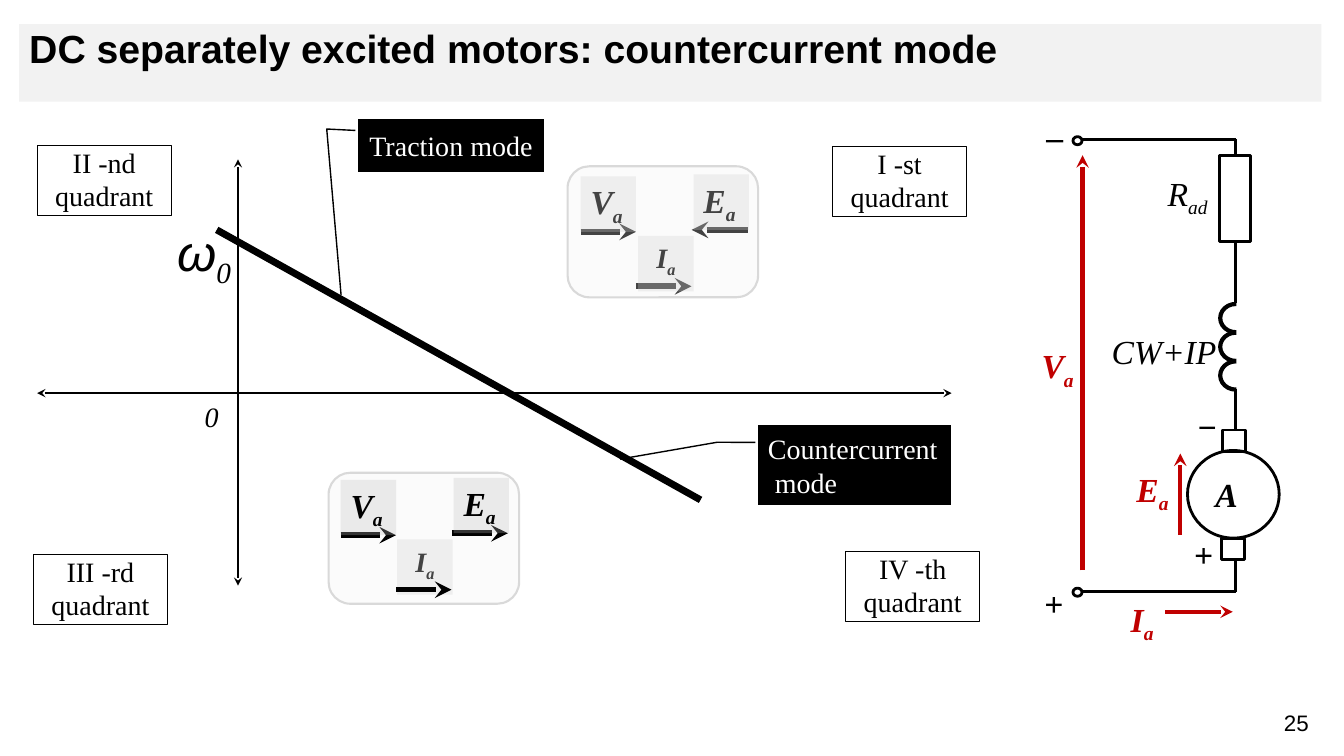
from dataclasses import dataclass

from lxml.etree import SubElement
from pptx import Presentation
from pptx.dml.color import RGBColor
from pptx.enum.shapes import MSO_CONNECTOR as Link, MSO_SHAPE as Kind
from pptx.enum.text import MSO_ANCHOR as Anchor, PP_ALIGN as Align
from pptx.oxml.ns import qn
from pptx.util import Pt


@dataclass(frozen=True)
class Theme:
    """Colours, fonts and type sizes of the slide."""
    black: str = "000000"
    white: str = "FFFFFF"
    red: str = "C00000"
    pale: str = "F2F2F2"
    tile: str = "BFBFBF"
    edge: str = "D9D9D9"
    sans: str = "Arial"
    serif: str = "Times New Roman"
    title: int = 28
    omega: int = 36
    label: int = 24
    text: int = 20
    page: int = 16


T = Theme()


def rgb(code):
    """Turn a hex code into a colour."""
    return RGBColor.from_string(code)


def write(shape, text, size, color=T.black, font=T.serif, bold=False,
          slant=False, align=Align.LEFT, space=None, sub=""):
    """Set and format the text of a shape, with an optional subscript."""
    frame = shape.text_frame
    frame.text = text
    frame.vertical_anchor = Anchor.TOP
    if sub:
        run = frame.paragraphs[0].add_run()
        run.text = sub
        run.font._element.set("baseline", "-25000")
    for para in frame.paragraphs:
        para.alignment = align
        para.line_spacing = space
        for run in para.runs:
            face = run.font
            face.name, face.size = font, Pt(size)
            face.bold, face.italic = bold, slant
            face.color.rgb = rgb(color)
    return frame


def shade(shape, alpha):
    """Make the fill of a shape see-through, alpha in percent."""
    tint = shape._element.spPr.find(qn("a:solidFill"))[0]
    SubElement(tint, qn("a:alpha")).set("val", str(alpha * 1000))


def block(slide, kind, box, fill=None, line=None, width=1):
    """Add a preset shape with plain fill and outline."""
    shape = slide.shapes.add_shape(kind, *map(Pt, box))
    shape.shadow.inherit = False
    if fill:
        shape.fill.solid()
        shape.fill.fore_color.rgb = rgb(fill)
    else:
        shape.fill.background()
    if line:
        shape.line.color.rgb = rgb(line)
        shape.line.width = Pt(width)
    else:
        shape.line.fill.background()
    return shape


def rule(slide, start, end, width, color=T.black, tips=()):
    """Add a straight line, with stealth tips at the named ends."""
    line = slide.shapes.add_connector(Link.STRAIGHT, *map(Pt, start + end))
    line.line.color.rgb = rgb(color)
    line.line.width = Pt(width)
    for tip in tips:
        SubElement(line.line._get_or_add_ln(), qn(tip)).set("type", "stealth")
    SubElement(line._element.spPr, qn("a:effectLst"))


def arrow(slide, start, end, width, color=T.black):
    """Add a line with one tip at its end."""
    rule(slide, start, end, width, color, ("a:tailEnd",))


def label(slide, box, text, size=T.label, **style):
    """Add a slanted text box that stays on one line."""
    shape = slide.shapes.add_textbox(*map(Pt, box))
    frame = write(shape, text, size, slant=True, **style)
    frame.word_wrap = False
    return frame


def callout(slide, box, bends, text, align):
    """Add a black callout with a bent leader line."""
    shape = block(slide, Kind.LINE_CALLOUT_2_NO_BORDER, box, T.black, T.black)
    for i, bend in enumerate(bends):
        shape.adjustments[i] = bend
    frame = write(shape, text, T.text, T.white, align=align)
    frame.vertical_anchor = Anchor.MIDDLE


def tile(slide, x, y, text, size=T.label, align=Align.LEFT):
    """Add a grey square that names one quantity."""
    shape = block(slide, Kind.RECTANGLE, (x, y, 39.6, 39.6), T.tile)
    shade(shape, 28)
    write(shape, text, size, bold=True, slant=True, align=align, sub="a")


def pane(slide, x, y):
    """Add the rounded see-through frame of a panel."""
    shape = block(slide, Kind.ROUNDED_RECTANGLE, (x, y, 136.1, 93.6),
                  T.pale, T.edge, 1.5)
    shade(shape, 28)


def marks(slide, x, y, back):
    """Add the three arrows and the voltage tiles of a panel."""
    ends = [(x + 88, y + 43.2), (x + 128, y + 43.2)]
    arrow(slide, *(ends[::-1] if back else ends), 4)
    for dx, dy in ((8.6, 44.6), (48.2, 83.5)):
        arrow(slide, (x + dx, y + dy), (x + dx + 39.6, y + dy), 4)
    tile(slide, x + 89.3, y + 3.6, "Е")
    tile(slide, x + 8.6, y + 5, "V")


def panels(slide):
    """Add the two panels of voltage, EMF and current directions."""
    x, y = 234.7, 337.7
    tile(slide, x + 49, y + 47.5, "I", T.text, Align.CENTER)
    pane(slide, x, y)
    marks(slide, x, y, False)
    x, y = 406.1, 121
    marks(slide, x, y, True)
    tile(slide, x + 49.7, y + 47.5, "I", T.text, Align.CENTER)
    pane(slide, x - 0.7, y - 2.2)


def graph(slide):
    """Add the axes, the speed line, quadrant names and callouts."""
    both = ("a:headEnd", "a:tailEnd")
    rule(slide, (170, 418.3), (170, 113.8), 1.25, tips=both)
    rule(slide, (26.6, 280.8), (679.7, 280.8), 1.25, tips=both)
    rule(slide, (154.8, 164.2), (500.4, 357.1), 5)
    for name, x, y in (("I -st", 594.7, 104.4), ("II -nd", 26.6, 103.7),
                       ("III -rd", 23.8, 396), ("IV -th", 604.1, 393.8)):
        shape = block(slide, Kind.RECTANGLE, (x, y, 95.8, 50.4),
                      line=T.black, width=0.75)
        frame = write(shape, name + "\nquadrant", T.text, align=Align.CENTER)
        frame.margin_left = frame.margin_right = Pt(0)
        frame.margin_top = frame.margin_bottom = Pt(0)
    label(slide, (139, 281.5, 32.4, 38.2), "0", T.text)
    callout(slide, (541.4, 303.8, 138.2, 56.9),
            (0.215, -0.013, 0.213, -0.211, 0.425, -0.713),
            "Countercurrent\n mode", Align.LEFT)
    callout(slide, (255.6, 85, 133.2, 38.2),
            (0.215, -0.013, 0.188, -0.167, 3.295, -0.09),
            "Traction mode", Align.CENTER)
    frame = label(slide, (119.5, 146.9, 62.6, 56.2), "ω", T.omega,
                  font=T.sans, space=1.15, sub="0")
    frame.paragraphs[0].runs[1].font.name = T.serif


def circuit(slide):
    """Add the armature circuit with its labels and arrows."""
    wire, left = 882.7, 772.6
    for i in range(3):
        block(slide, Kind.OVAL, (871.6, 217.1 + 20.5 * i, 22.3, 20.2),
              T.white, T.black, 3)
    block(slide, Kind.RECTANGLE, (883.1, 175.3, 33.1, 123.1), T.white)
    for top, end in ((99.4, 110.9), (172.1, 216.7),
                     (277.9, 307.4), (396.7, 422.6)):
        rule(slide, (wire, top), (wire, end), 2)
    for y in (99.4, 422.6):
        rule(slide, (wire, y), (left, y), 2)
    for kind, box in ((Kind.RECTANGLE, (871.2, 111.2, 22.3, 61.2)),
                      (Kind.RECTANGLE, (873, 307.1, 16.6, 15.8)),
                      (Kind.OVAL, (848.2, 321.8, 65.5, 62.6)),
                      (Kind.OVAL, (766.4, 97.6, 6.5, 5.8)),
                      (Kind.OVAL, (766.4, 420.1, 6.5, 5.8))):
        block(slide, kind, box, line=T.black, width=2)
    block(slide, Kind.RECTANGLE, (872.6, 384.5, 16.6, 15.1),
          T.white, T.black, 2)
    for text, sub, x, y, color, bold in (
            ("R", "ad", 826.9, 114.8, T.black, False),
            ("CW+IP", "", 787, 228.2, T.black, False),
            ("I", "a", 800.6, 419, T.red, True),
            ("Е", "a", 804.6, 326.5, T.red, True),
            ("V", "a", 736.9, 238, T.red, True),
            ("A", "", 861.1, 330.5, T.black, True),
            ("−", "", 847.8, 281.9, T.black, True),
            ("+", "", 845.6, 373.3, T.black, True),
            ("–", "", 740.5, 75.2, T.black, True),
            ("+", "", 738.7, 408.2, T.black, True)):
        wide = 89.3 if len(text) > 1 else 50 if sub else 34
        label(slide, (x, y, wide, 46), text, color=color, bold=bold,
              space=1.15, sub=sub)
    for start, end in (((832.3, 437), (880.6, 437)),
                       ((843.1, 382.3), (843.1, 324)),
                       ((773.3, 407.5), (773.3, 110.9))):
        arrow(slide, start, end, 3, T.red)


def head(slide):
    """Format the title and add the page number."""
    title = slide.shapes.title
    title.left, title.top = Pt(13.7), Pt(17.3)
    title.width, title.height = Pt(930.2), Pt(55.4)
    title.fill.solid()
    title.fill.fore_color.rgb = rgb(T.pale)
    write(title, "DC separately excited motors: countercurrent mode",
          T.title, font=T.sans, bold=True, space=0.9)
    page = slide.shapes.add_textbox(Pt(902.9), Pt(503.3), Pt(46.1), Pt(26.6))
    write(page, "25", T.page, font=T.sans, align=Align.CENTER)
    page.text_frame.word_wrap = True


def main():
    """Build the slide and save it."""
    deck = Presentation()
    deck.slide_width, deck.slide_height = Pt(960), Pt(540)
    slide = deck.slides.add_slide(deck.slide_layouts[5])
    head(slide)
    graph(slide)
    panels(slide)
    circuit(slide)
    deck.save("out.pptx")


if __name__ == "__main__":
    main()
